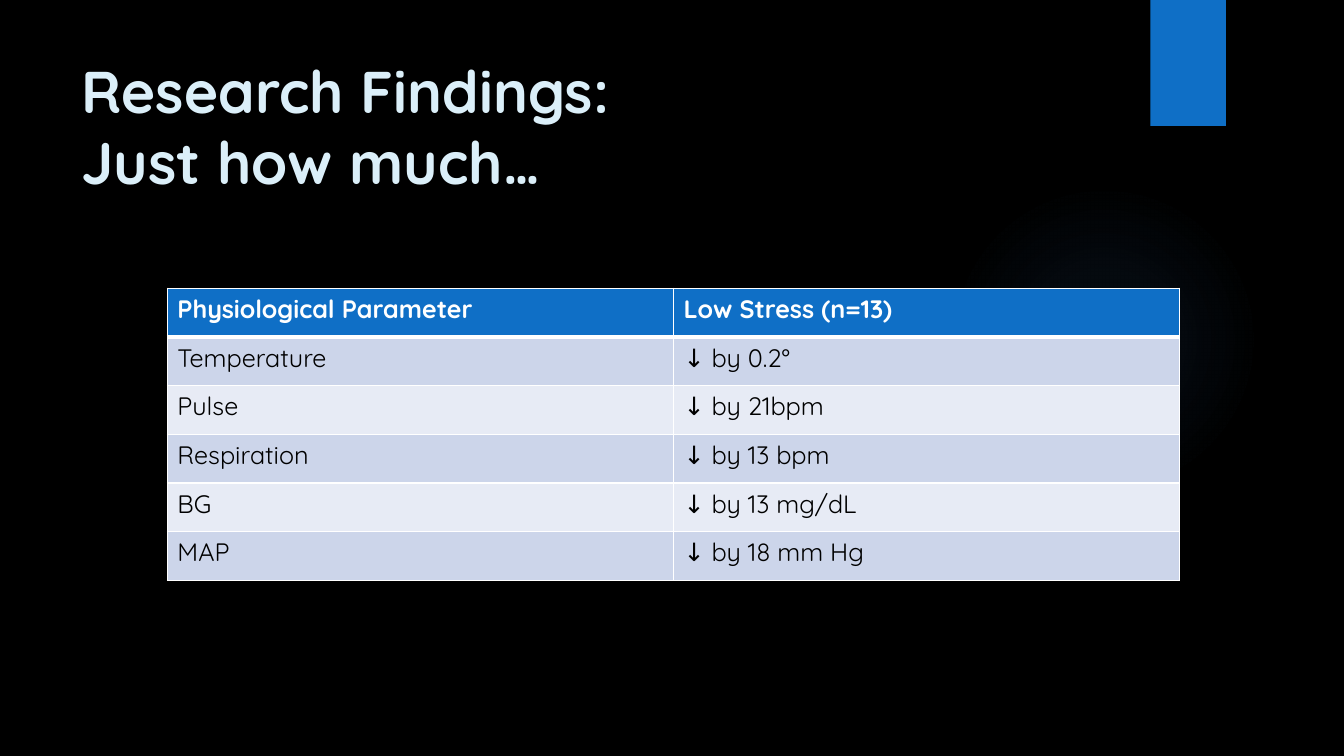
import lxml.etree
import pptx
import pptx.dml.color
import pptx.enum.shapes
import pptx.enum.text
import pptx.oxml.ns
import pptx.util

WIDTH, HEIGHT = 13.33, 7.5
FONT = "Quicksand"
COLORS = {
    "background": "000000",
    "accent": "0F6FC6",
    "glow": "448AD7",
    "title": "DBEFF9",
    "white": "FFFFFF",
    "body": "000000",
    "odd_row": "CCD5EA",
    "even_row": "E7EBF5",
}
GLOW_STOPS = [(0, 7), (36, 6), (69, 0)]  # position and opacity in percent
FINDINGS = [
    ("Physiological Parameter", "Low Stress (n=13)"),
    ("Temperature", "↓ by 0.2°"),
    ("Pulse", "↓ by 21bpm"),
    ("Respiration", "↓ by 13 bpm"),
    ("BG", "↓ by 13 mg/dL"),
    ("MAP", "↓ by 18 mm Hg"),
]


def color(name):
    return pptx.dml.color.RGBColor.from_string(COLORS[name])


def inches(*lengths):
    return [pptx.util.Inches(length) for length in lengths]


def add_child(parent, tag, **attributes):
    child = lxml.etree.SubElement(parent, pptx.oxml.ns.qn(tag))
    for key, value in attributes.items():
        child.set(key, str(value))
    return child


def paint(fill, name):
    fill.solid()
    fill.fore_color.rgb = color(name)


def style_text(frame, size, name, bold):
    for para in frame.paragraphs:
        for span in para.runs:
            span.font.name = FONT
            span.font.size = pptx.util.Pt(size)
            span.font.bold = bold
            span.font.color.rgb = color(name)


def add_block(page, kind, area, fill_name):
    block = page.shapes.add_shape(kind, *inches(*area))
    block.shadow.inherit = False
    block.line.fill.background()
    paint(block.fill, fill_name)
    return block


def add_glow(page, area):
    glow = add_block(page, pptx.enum.shapes.MSO_SHAPE.OVAL, area, "glow")
    properties = glow._element.spPr
    solid = properties.find(pptx.oxml.ns.qn("a:solidFill"))
    gradient = add_child(properties, "a:gradFill", rotWithShape=1)
    properties.replace(solid, gradient)
    stops = add_child(gradient, "a:gsLst")
    for position, opacity in GLOW_STOPS:
        stop = add_child(stops, "a:gs", pos=position * 1000)
        tint = add_child(stop, "a:srgbClr", val=COLORS["glow"])
        add_child(tint, "a:alpha", val=opacity * 1000)
    circle = add_child(gradient, "a:path", path="circle")
    add_child(circle, "a:fillToRect", l=50000, t=50000, r=50000, b=50000)


def add_title(page, area, text):
    box = page.shapes.add_textbox(*inches(*area))
    frame = box.text_frame
    frame.word_wrap = True
    frame.vertical_anchor = pptx.enum.text.MSO_ANCHOR.MIDDLE
    frame.paragraphs[0].text = text
    style_text(frame, 42, "title", True)


def add_borders(cell, top, bottom):
    properties = cell._tc.get_or_add_tcPr()
    for side, points in (("L", 1), ("R", 1), ("T", top), ("B", bottom)):
        line = add_child(properties, "a:ln" + side, w=pptx.util.Pt(points))
        add_child(add_child(line, "a:solidFill"), "a:srgbClr", val=COLORS["white"])


def add_findings(page, area):
    table = page.shapes.add_table(
        len(FINDINGS), len(FINDINGS[0]), *inches(*area)).table
    table.horz_banding = False
    for row, texts in enumerate(FINDINGS):
        header = row == 0
        fill_name = "accent" if header else "odd_row" if row % 2 else "even_row"
        for column, text in enumerate(texts):
            cell = table.cell(row, column)
            cell.text_frame.text = text
            style_text(cell.text_frame, 18, "white" if header else "body", header)
            # A thick rule separates the header from the body
            add_borders(cell, 3 if row == 1 else 1, 3 if header else 1)
            paint(cell.fill, fill_name)


def main():
    deck = pptx.Presentation()
    deck.slide_width, deck.slide_height = inches(WIDTH, HEIGHT)
    page = deck.slides.add_slide(deck.slide_layouts[6])
    paint(page.background.fill, "background")

    # Decoration
    add_glow(page, (9.41, 1.83, 3.08, 3.08))
    add_block(page, pptx.enum.shapes.MSO_SHAPE.RECTANGLE,
              (11.41, 0, 0.75, HEIGHT / 6), "accent")

    # Content
    add_title(page, (0.71, 0.48, 10.29, 1.53),
              "Research Findings:\vJust how much…")
    add_findings(page, (1.66, 2.86, 10.04, 2.9))

    deck.save("out.pptx")


if __name__ == "__main__":
    main()
